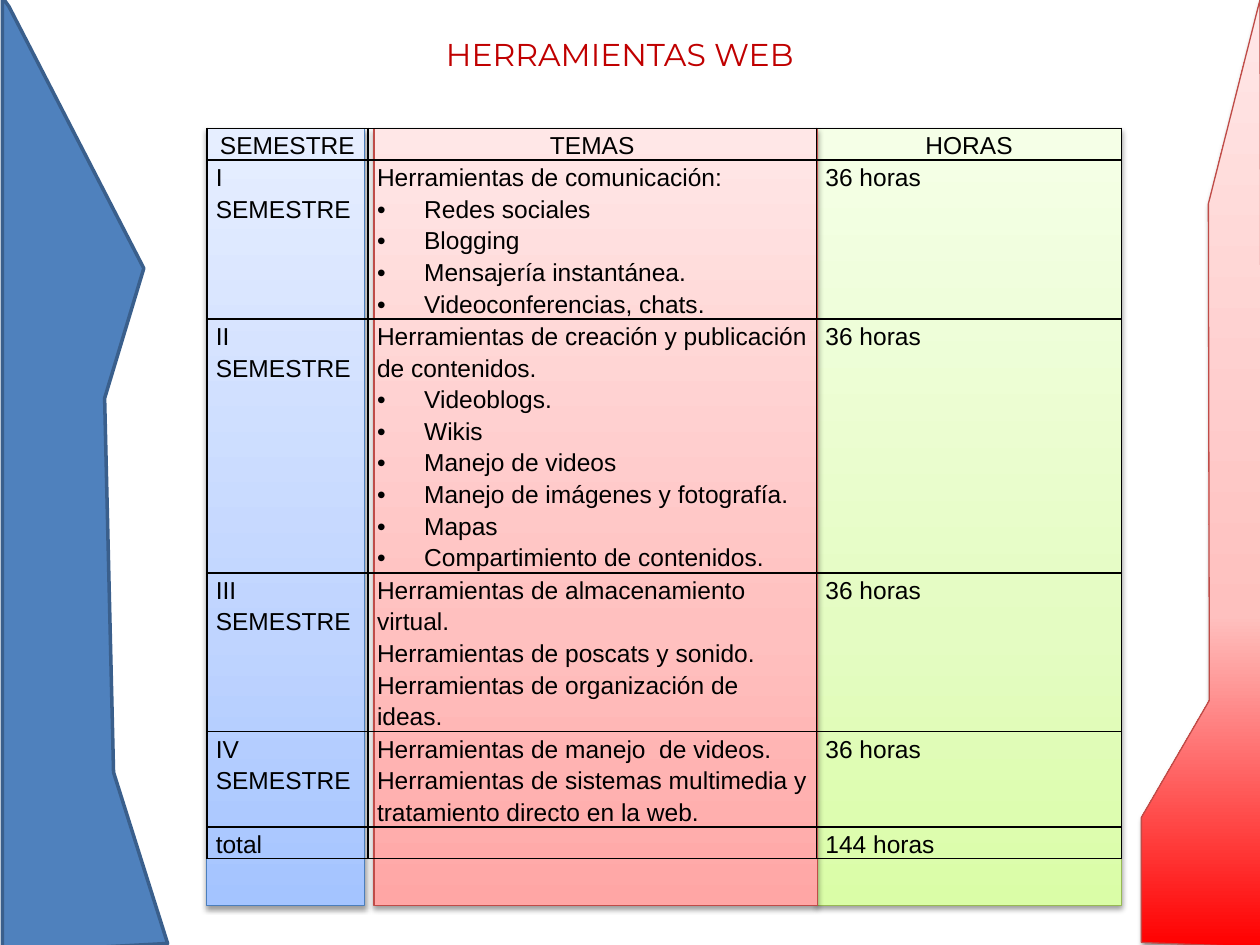
from dataclasses import dataclass

from lxml import etree
from pptx import Presentation
from pptx.dml.color import RGBColor
from pptx.enum.shapes import MSO_SHAPE
from pptx.enum.text import MSO_AUTO_SIZE, PP_ALIGN
from pptx.oxml.ns import qn
from pptx.util import Cm, Pt

RECTANGLE = MSO_SHAPE.RECTANGLE
LEFT, CENTER = PP_ALIGN.LEFT, PP_ALIGN.CENTER
FIT_SHAPE = MSO_AUTO_SIZE.SHAPE_TO_FIT_TEXT


@dataclass(frozen=True)
class Theme:
    title_font: str = "Montserrat"
    body_font: str = "Arial"
    title_size: int = 18
    body_size: int = 14
    title_color: str = "C00000"
    ink: str = "000000"
    panel_fill: str = "4F81BD"
    panel_line: str = "3A5F8C"
    blue_line: str = "4B7EBC"
    red_line: str = "BF4C48"
    green_line: str = "98B955"
    # Gradients run from bottom to top.
    blue: tuple = ("A4C4FF", "BFD4FF", "E6EEFF")
    red: tuple = ("FFA6A5", "FFC0BF", "FFE7E7")
    green: tuple = ("DAFDA7", "E4FCC2", "F5FFE7")
    vivid_red: tuple = ("FF0000", "FFC0BF", "FFE7E7")


THEME = Theme()
STOP_POSITIONS = (0, 35, 100)
LINE_HEIGHT = 0.64
BULLET = "•"

TABLE_LEFT, TABLE_TOP = 4.17, 2.59
COLUMN_WIDTHS = (3.25, 9.04, 6.15)
BAND_HEIGHT = 15.67
BANDS = (
    (16.46, 6.15, THEME.green, THEME.green_line),
    (7.54, 8.94, THEME.red, THEME.red_line),
    (4.17, 3.18, THEME.blue, THEME.blue_line),
)
BLUE_PANEL = ((0.05, -0.05), (0.05, 19.2), (3.38, 19.02), (2.29, 15.57),
              (2.11, 8.03), (2.9, 5.41), (0.18, 0.13))
RED_PANEL = ((25.45, 19.08), (25.07, 19.08), (23.01, 19), (23.01, 16.48),
             (24.38, 14.12), (24.36, 4.11), (25.4, 0))

# Each row: height in text lines, then the paragraphs of its three cells.
ROWS = (
    (1, ["SEMESTRE"], ["TEMAS"], ["HORAS"]),
    (5, ["I SEMESTRE"],
     ["Herramientas de comunicación:", "• Redes sociales", "• Blogging",
      "• Mensajería instantánea.", "• Videoconferencias, chats."],
     ["36 horas"]),
    (8, ["II SEMESTRE"],
     ["Herramientas de creación y publicación de contenidos.",
      "• Videoblogs.", "• Wikis", "• Manejo de videos",
      "• Manejo de imágenes y fotografía.", "• Mapas",
      "• Compartimiento de contenidos."],
     ["36 horas"]),
    (5, ["III SEMESTRE"],
     ["Herramientas de almacenamiento virtual.",
      "Herramientas de poscats y sonido.",
      "Herramientas de organización de ideas."],
     ["36 horas"]),
    (3, ["IV SEMESTRE"],
     ["Herramientas de manejo  de videos.",
      "Herramientas de sistemas multimedia y tratamiento directo en la web."],
     ["36 horas"]),
    (1, ["total"], [""], ["144 horas"]),
)


def rgb(value):
    return RGBColor.from_string(value)


def set_all(target, values):
    for name, value in values.items():
        setattr(target, name, value)


def add_color(parent, value):
    return etree.SubElement(parent, qn("a:srgbClr"), val=value)


class SlideBuilder:
    def __init__(self, slide, theme):
        self.slide = slide
        self.theme = theme

    def band(self, left, width, colors, line):
        shape = self.slide.shapes.add_shape(
            RECTANGLE, Cm(left), Cm(TABLE_TOP), Cm(width), Cm(BAND_HEIGHT))
        self.outline(shape, line, 0.75)
        self.gradient(shape, colors)
        self.add_shadow(shape)

    def panel(self, points):
        start, *others = [(Cm(x), Cm(y)) for x, y in points]
        builder = self.slide.shapes.build_freeform(*start)
        builder.add_line_segments(others, close=True)
        return builder.convert_to_shape()

    def solid_panel(self, points, fill, line):
        shape = self.panel(points)
        shape.fill.solid()
        shape.fill.fore_color.rgb = rgb(fill)
        self.outline(shape, line, 2)

    def gradient_panel(self, points, colors, line):
        shape = self.panel(points)
        self.outline(shape, line, 0.75)
        self.gradient(shape, colors)
        self.add_shadow(shape)

    def outline(self, shape, color, width):
        """Set the line and remove the inherited shadow."""
        shape.shadow.inherit = False
        shape.line.color.rgb = rgb(color)
        shape.line.width = Pt(width)

    def gradient(self, shape, colors):
        shape.fill.gradient()
        shape.fill.gradient_angle = 90
        stops = shape.element.spPr.find(f".//{qn('a:gsLst')}")
        for stop in list(stops):
            stops.remove(stop)
        for position, color in zip(STOP_POSITIONS, colors):
            stop = etree.SubElement(stops, qn("a:gs"), pos=str(position * 1000))
            add_color(stop, color)

    def add_shadow(self, shape):
        effects = shape.element.spPr.find(qn("a:effectLst"))
        shadow = etree.SubElement(
            effects, qn("a:outerShdw"), blurRad=str(Pt(3.1)),
            dist=str(Pt(1.6)), dir="5400000", rotWithShape="0")
        color = add_color(shadow, self.theme.ink)
        etree.SubElement(color, qn("a:alpha"), val="38000")

    def span(self, para, text, name, size, color):
        span = para.add_run()
        span.text = text
        set_all(span.font, {"name": name, "size": Pt(size)})
        span.font.color.rgb = rgb(color)

    def title(self, text):
        box = self.slide.shapes.add_textbox(Cm(8.74), Cm(0.58), Cm(9.32), Cm(1.02))
        frame = box.text_frame
        set_all(frame, {"word_wrap": True, "auto_size": FIT_SHAPE})
        self.span(frame.paragraphs[0], text, self.theme.title_font,
                  self.theme.title_size, self.theme.title_color)

    def table(self, rows):
        height = LINE_HEIGHT * sum(row[0] for row in rows)
        table = self.slide.shapes.add_table(
            len(rows), len(COLUMN_WIDTHS), Cm(TABLE_LEFT), Cm(TABLE_TOP),
            Cm(sum(COLUMN_WIDTHS)), Cm(height)).table
        set_all(table, {"first_row": False, "horz_banding": False})
        for column, width in zip(table.columns, COLUMN_WIDTHS):
            column.width = Cm(width)
        for index, (lines, *texts) in enumerate(rows):
            table.rows[index].height = Cm(LINE_HEIGHT * lines)
            align = LEFT if index else CENTER
            for cell, paragraphs in zip(table.rows[index].cells, texts):
                self.cell(cell, paragraphs, align)

    def cell(self, cell, paragraphs, align):
        set_all(cell, {"margin_left": Cm(0.18), "margin_right": Cm(0.18),
                       "margin_top": 0, "margin_bottom": 0})
        self.borders(cell)
        cell.fill.background()
        frame = cell.text_frame
        for index, text in enumerate(paragraphs):
            para = frame.add_paragraph() if index else frame.paragraphs[0]
            set_all(para, {"alignment": align, "line_spacing": 1.15})
            if text.startswith(BULLET):
                self.bullet(para)
            if text:
                self.span(para, text.removeprefix(BULLET).lstrip(),
                          self.theme.body_font, self.theme.body_size, self.theme.ink)
            else:
                etree.SubElement(para._p, qn("a:endParaRPr"),
                                 sz=str(self.theme.body_size * 100))

    def bullet(self, para):
        properties = para._p.get_or_add_pPr()
        properties.set("marL", str(Cm(0.95)))
        properties.set("indent", str(-Cm(0.95)))
        etree.SubElement(properties, qn("a:buFont"), typeface=self.theme.body_font)
        etree.SubElement(properties, qn("a:buChar"), char=BULLET)

    def borders(self, cell):
        properties = cell._tc.get_or_add_tcPr()
        for side in ("lnL", "lnR", "lnT", "lnB"):
            line = etree.SubElement(properties, qn(f"a:{side}"), w=str(Pt(1)))
            add_color(etree.SubElement(line, qn("a:solidFill")), self.theme.ink)


def main():
    deck = Presentation()
    set_all(deck, {"slide_width": Cm(25.4), "slide_height": Cm(19.05)})
    page = SlideBuilder(deck.slides.add_slide(deck.slide_layouts[6]), THEME)
    for band in BANDS:
        page.band(*band)
    page.solid_panel(BLUE_PANEL, THEME.panel_fill, THEME.panel_line)
    page.gradient_panel(RED_PANEL, THEME.vivid_red, THEME.red_line)
    page.table(ROWS)
    page.title("HERRAMIENTAS WEB")
    deck.save("out.pptx")


if __name__ == "__main__":
    main()
